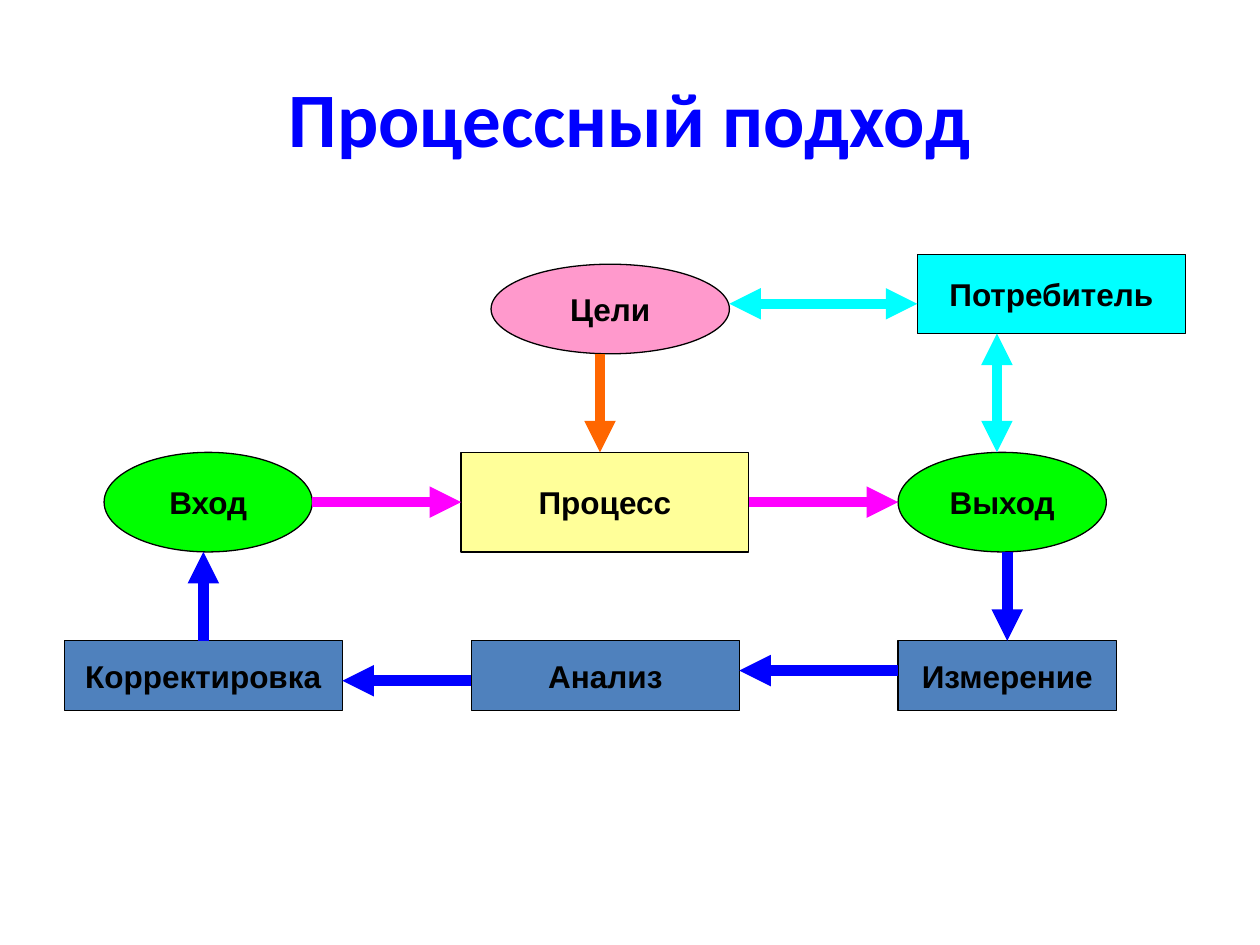
import pptx
import pptx.util
import pptx.dml.color
import pptx.enum.shapes
import pptx.enum.text
import pptx.oxml
import pptx.oxml.ns
from dataclasses import dataclass

Pt = pptx.util.Pt
Kind = pptx.enum.shapes.MSO_SHAPE
Mid = pptx.enum.text.MSO_ANCHOR.MIDDLE
Center = pptx.enum.text.PP_ALIGN.CENTER
TOP, LEFT, RIGHT = 0, 1, 3


@dataclass(frozen=True)
class Theme:
    blue: str = "0000FF"
    black: str = "000000"
    green: str = "00FF00"
    yellow: str = "FFFF99"
    steel: str = "4F81BD"
    pink: str = "FF99CC"
    cyan: str = "00FFFF"
    purple: str = "FF00FF"
    orange: str = "FF6600"
    head: int = 44
    body: int = 18
    edge: float = 0.75
    thick: int = 6


THEME = Theme()


def rgb(code):
    return pptx.dml.color.RGBColor.from_string(code)


def style(para, name, size, color):
    para.alignment = Center
    font = para.font
    font.name, font.size, font.bold = name, Pt(size), True
    font.color.rgb = rgb(color)


def set_title(slide, text):
    title = slide.shapes.title
    title.left, title.top = Pt(36), Pt(21.6)
    title.width, title.height = Pt(648), Pt(90)
    frame = title.text_frame
    frame.text = text
    frame.vertical_anchor = Mid
    style(frame.paragraphs[0], "Calibri", THEME.head, THEME.blue)


def add_node(slide, kind, text, color, x, y, w, h):
    node = slide.shapes.add_shape(kind, Pt(x), Pt(y), Pt(w), Pt(h))
    node.shadow.inherit = False
    node.fill.solid()
    node.fill.fore_color.rgb = rgb(color)
    node.line.color.rgb = rgb(THEME.black)
    node.line.width = Pt(THEME.edge)
    frame = node.text_frame
    frame.text = text
    frame.word_wrap = False
    frame.vertical_anchor = Mid
    style(frame.paragraphs[0], "Arial", THEME.body, THEME.black)
    return node


def add_arrow(slide, color, x1, y1, x2, y2, start=None, end=None, both=False):
    kind = pptx.enum.shapes.MSO_CONNECTOR.STRAIGHT
    link = slide.shapes.add_connector(kind, Pt(x1), Pt(y1), Pt(x2), Pt(y2))
    link.line.color.rgb = rgb(color)
    link.line.width = Pt(THEME.thick)
    line = link.line._get_or_add_ln()
    for tag in ("a:headEnd", "a:tailEnd") if both else ("a:tailEnd",):
        tip = pptx.oxml.xmlchemy.OxmlElement(tag)
        tip.set("type", "triangle")
        line.append(tip)
    link._element.spPr.append(pptx.oxml.xmlchemy.OxmlElement("a:effectLst"))
    if start:
        link.begin_connect(*start)
    if end:
        link.end_connect(*end)


def main():
    deck = pptx.Presentation()
    deck.slide_width, deck.slide_height = Pt(720), Pt(540)
    slide = deck.slides.add_slide(deck.slide_layouts[5])
    set_title(slide, "Процессный подход")

    row, tall = 258.5, 56.9
    base, low = 366.2, 39.8
    mid, foot = row + tall / 2, row + tall
    oval, box = Kind.OVAL, Kind.RECTANGLE
    t = THEME

    add_node(slide, oval, "Вход", t.green, 59.5, row, 119, tall)
    add_node(slide, oval, "Выход", t.green, 513.2, row, 119, tall)
    work = add_node(slide, box, "Процесс", t.yellow, 263.5, row, 164.4, tall)
    gauge = add_node(slide, box, "Измерение", t.steel, 513.2, base, 124.8, low)
    add_node(slide, box, "Анализ", t.steel, 269.3, base, 153.2, low)
    fix = add_node(slide, box, "Корректировка", t.steel, 36.8, base, 158.8, low)
    add_node(slide, oval, "Цели", t.pink, 280.6, 151, 136.2, 51.2)
    add_node(slide, box, "Потребитель", t.cyan, 524.2, 145.4, 153.2, 45.2)

    add_arrow(slide, t.purple, 178.5, mid, 263.5, mid, end=(work, LEFT))
    add_arrow(slide, t.purple, 427.9, mid, 513.2, mid, start=(work, RIGHT))
    add_arrow(slide, t.blue, 575.6, foot, 575.6, base, end=(gauge, TOP))
    add_arrow(slide, t.blue, 513.2, 383.2, 422.5, 383.2)
    add_arrow(slide, t.blue, 269.3, 389, 195.6, 389)
    add_arrow(slide, t.blue, 116.2, base, 116.2, foot, start=(fix, TOP))
    add_arrow(slide, t.cyan, 416.8, 173.6, 524.2, 173.6, both=True)
    add_arrow(slide, t.cyan, 569.7, 190.6, 569.7, row, both=True)
    add_arrow(slide, t.orange, 342.9, 202.2, 342.9, row)
    deck.save("out.pptx")


if __name__ == "__main__":
    main()
